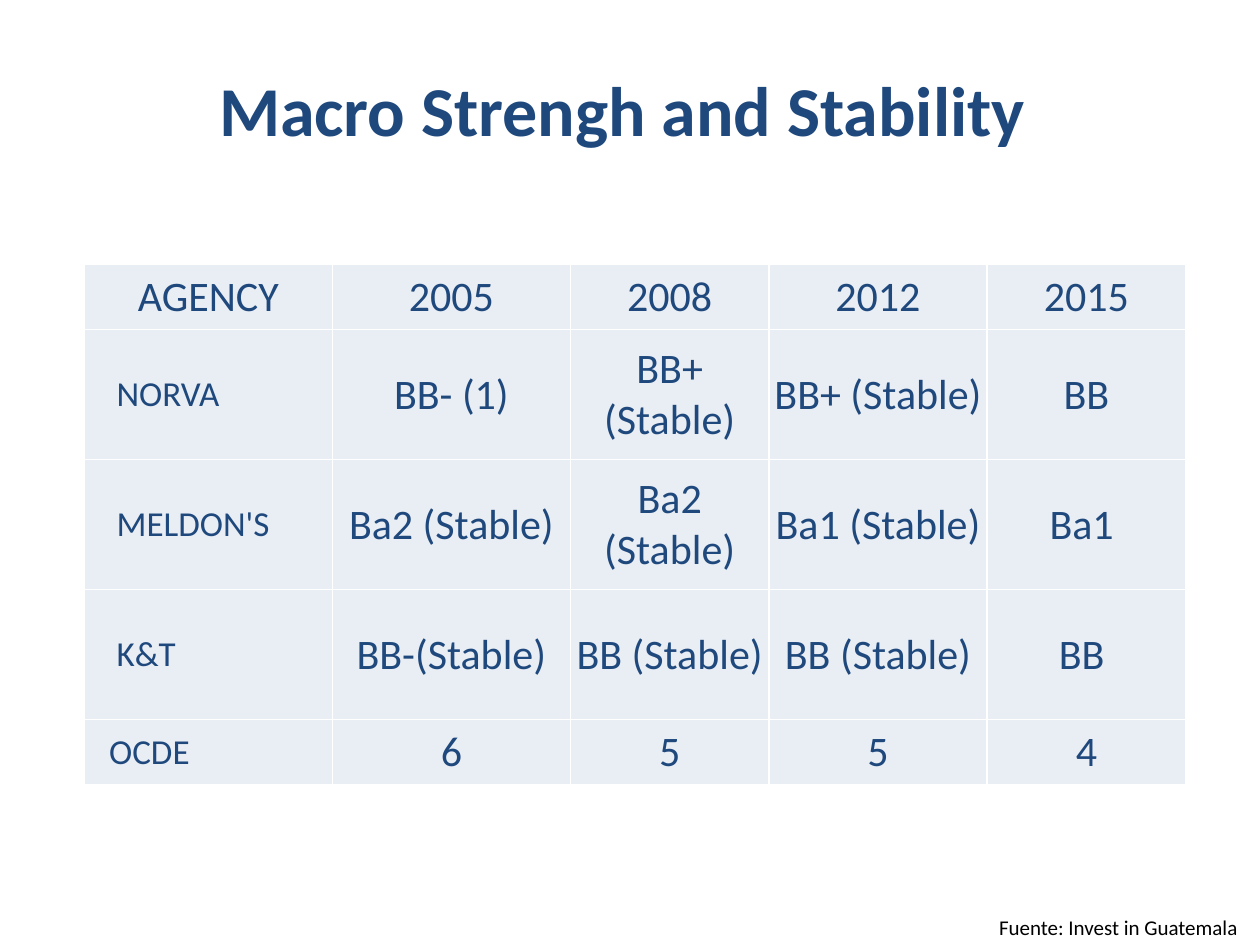
import pptx
import pptx.dml.color
import pptx.enum.text
import pptx.oxml
import pptx.oxml.ns
import pptx.util

Cm, Pt = pptx.util.Cm, pptx.util.Pt
ALIGN = pptx.enum.text.PP_ALIGN
MIDDLE = pptx.enum.text.MSO_ANCHOR.MIDDLE

COLORS = {"navy": "1F497D", "pale": "E9EDF4", "white": "FFFFFF", "black": "000000"}

HEAD = ["AGENCY", "2005", "2008", "2012", "2015"]
RATINGS = [
    ["NORVA", "BB- (1)", "BB+ (Stable)", "BB+ (Stable)", "BB"],
    ["MELDON'S", "Ba2 (Stable)", "Ba2 (Stable)", "Ba1 (Stable)", "Ba1 "],
    ["K&T", "BB-(Stable)", "BB (Stable)", "BB (Stable)", "BB "],
    ["OCDE", "6", "5", "5", "4"],
]
WIDTHS = [5, 4.8, 4, 4.4, 4]
HEIGHTS = [1.31, 2.62, 2.62, 2.62, 1.31]
INDENTS = [0.02, 0.65, 0.65, 0.65, 0.5]


def assign(target, values):
    for name, value in values.items():
        setattr(target, name, value)


class Deck:
    font = "Calibri"

    def __init__(self, slide):
        self.slide = slide

    def letter(self, frame, text, size, color, align=ALIGN.CENTER, **style):
        """Fill a text frame with one styled paragraph; style holds font values."""
        para = frame.paragraphs[0]
        para.text = text
        para.alignment = align
        font = para.runs[0].font
        assign(font, {"name": self.font, "size": Pt(size), **style})
        font.color.rgb = pptx.dml.color.RGBColor.from_string(COLORS[color])

    def label(self, place, text, size, color, **style):
        box = self.slide.shapes.add_textbox(*map(Cm, place))
        box.text_frame.word_wrap = True
        self.letter(box.text_frame, text, size, color, **style)
        return box.text_frame

    def border(self, cell, color, width):
        """Draw a line on all four sides, ahead of the fill in the cell's XML."""
        props = cell._tc.get_or_add_tcPr()
        for spot, side in enumerate(("lnL", "lnR", "lnT", "lnB")):
            props.insert(spot, pptx.oxml.parse_xml(
                f'<a:{side} {pptx.oxml.ns.nsdecls("a")} w="{Pt(width)}"><a:solidFill>'
                f'<a:srgbClr val="{COLORS[color]}"/></a:solidFill></a:{side}>'))

    def table(self, left, top, rows, widths, heights, indents):
        grid = self.slide.shapes.add_table(
            len(rows), len(widths), Cm(left), Cm(top),
            Cm(sum(widths)), Cm(sum(heights))).table
        for column, width in zip(grid.columns, widths):
            column.width = Cm(width)
        for y, texts in enumerate(rows):
            grid.rows[y].height = Cm(heights[y])
            for x, text in enumerate(texts):
                agency = x == 0 and y > 0
                cell = grid.cell(y, x)
                assign(cell, {
                    "margin_left": Cm(indents[y] if agency else 0.02),
                    "margin_right": Cm(0.02),
                    "margin_top": Cm(0.02),
                    "margin_bottom": 0,
                    "vertical_anchor": MIDDLE,
                })
                cell.fill.solid()
                cell.fill.fore_color.rgb = pptx.dml.color.RGBColor.from_string(COLORS["pale"])
                self.border(cell, "white", 1)
                self.letter(cell.text_frame, text, 20 if agency else 24, "navy",
                            ALIGN.LEFT if agency else ALIGN.CENTER, bold=False)


def main():
    show = pptx.Presentation()
    assign(show, {"slide_width": Cm(25.4), "slide_height": Cm(19.05)})
    deck = Deck(show.slides.add_slide(show.slide_layouts[6]))

    title = deck.label((1.27, 0.76, 22.86, 3.18), "Macro Strengh and Stability ",
                       40, "navy", bold=True)
    title.vertical_anchor = MIDDLE
    title.paragraphs[0].line_spacing = 0.8

    deck.table(1.7, 5.33, [HEAD] + RATINGS, WIDTHS, HEIGHTS, INDENTS)
    deck.label((19.89, 18.31, 5.5, 0.74), "Fuente: Invest in Guatemala",
               12, "black", align=ALIGN.LEFT)
    show.save("out.pptx")


if __name__ == "__main__":
    main()
